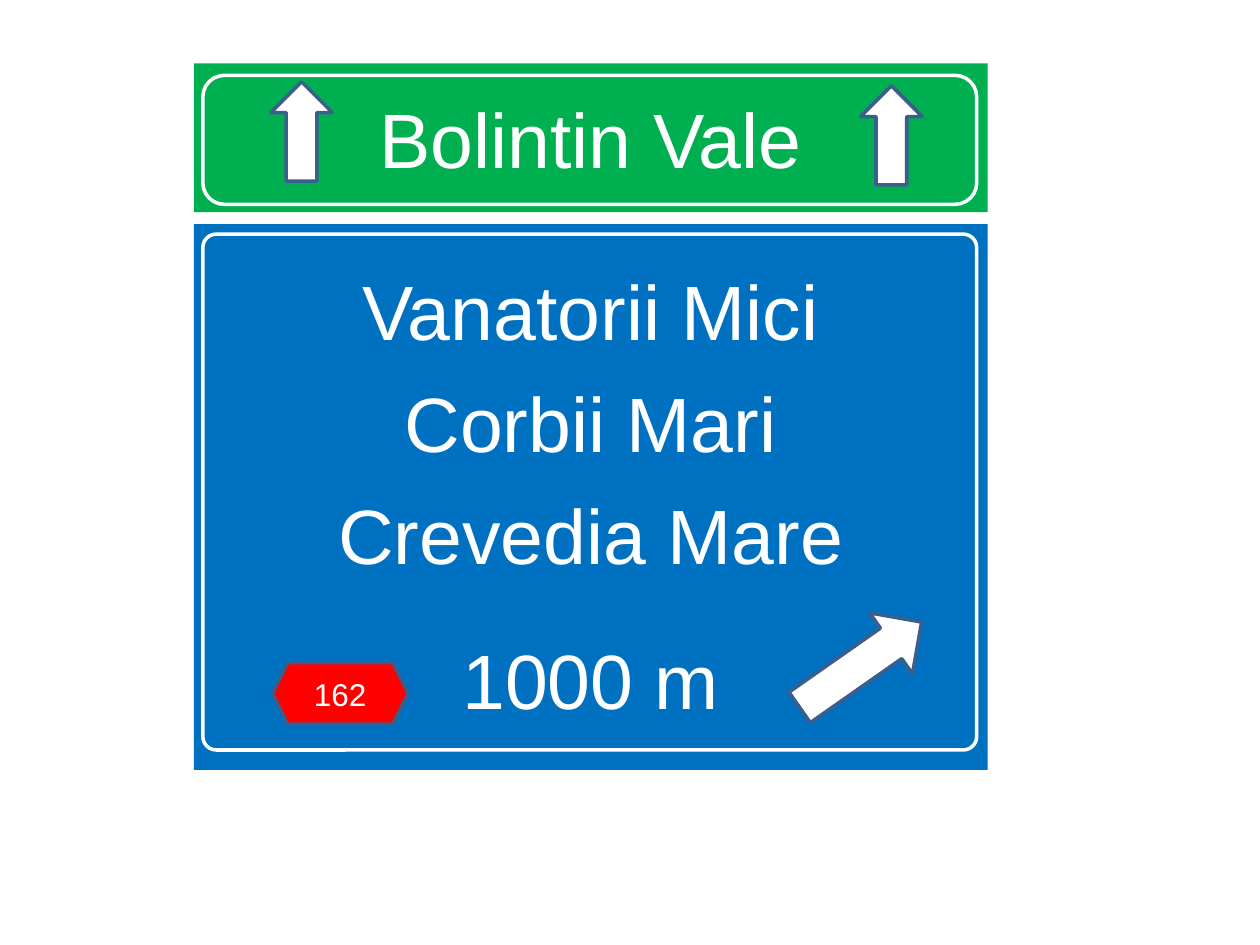
from pptx import Presentation
from pptx.dml.color import RGBColor
from pptx.enum.shapes import MSO_SHAPE
from pptx.enum.text import MSO_ANCHOR, PP_ALIGN
from pptx.util import Cm, Pt

GREEN = RGBColor(0x00, 0xB0, 0x50)
BLUE = RGBColor(0x00, 0x70, 0xC0)
RED = RGBColor(0xFF, 0x00, 0x00)
WHITE = RGBColor(0xFF, 0xFF, 0xFF)
OUTLINE = RGBColor(0x3A, 0x5F, 0x8C)

PANEL_LEFT, PANEL_WIDTH = 3.91, 16.0
BORDER_LEFT, BORDER_WIDTH = 4.09, 15.6


def add_figure(slide, kind, left, top, width, height, fill=None, line=None):
    """Add a preset shape, measured in centimetres."""
    shape = slide.shapes.add_shape(kind, Cm(left), Cm(top), Cm(width), Cm(height))
    shape.shadow.inherit = False
    if fill is None:
        shape.fill.background()
    else:
        shape.fill.solid()
        shape.fill.fore_color.rgb = fill
    if line is None:
        shape.line.fill.background()
    else:
        shape.line.color.rgb = line
        shape.line.width = Pt(2)
    return shape


def write_lines(shape, lines, size, anchor=MSO_ANCHOR.MIDDLE):
    """Write centred white lines into a shape."""
    text_frame = shape.text_frame
    text_frame.word_wrap = True
    text_frame.vertical_anchor = anchor
    text_frame.text = "\n".join(lines)
    for paragraph in text_frame.paragraphs:
        paragraph.alignment = PP_ALIGN.CENTER
        font = paragraph.runs[0].font
        font.name = "Arial"
        font.size = Pt(size)
        font.color.rgb = WHITE


def add_panel(slide, top, height, fill):
    return add_figure(slide, MSO_SHAPE.RECTANGLE, PANEL_LEFT, top,
                      PANEL_WIDTH, height, fill)


def add_border(slide, top, height):
    return add_figure(slide, MSO_SHAPE.ROUNDED_RECTANGLE, BORDER_LEFT, top,
                      BORDER_WIDTH, height, line=WHITE)


def add_arrow(slide, kind, left, top, width, height, rotation=0):
    arrow = add_figure(slide, kind, left, top, width, height, WHITE, OUTLINE)
    arrow.rotation = rotation


def main():
    presentation = Presentation()
    presentation.slide_width = Cm(25.4)
    presentation.slide_height = Cm(19.05)
    slide = presentation.slides.add_slide(presentation.slide_layouts[6])

    # Green panel: straight ahead
    ahead_panel = add_panel(slide, 1.28, 3.0, GREEN)
    write_lines(ahead_panel, ["Bolintin Vale"], 44)

    # Blue panel: places at the exit and the distance to it
    exit_panel = add_panel(slide, 4.52, 11.0, BLUE)
    write_lines(exit_panel,
                ["Vanatorii Mici", "Corbii Mari", "Crevedia Mare", "1000 m"],
                44, MSO_ANCHOR.BOTTOM)
    exit_panel.text_frame.margin_bottom = Cm(0.9)
    *_, last_place, distance = exit_panel.text_frame.paragraphs
    for paragraph in exit_panel.text_frame.paragraphs[1:3]:
        paragraph.space_before = Pt(11)
    distance.space_before = Pt(30.5)

    # Direction arrows
    add_arrow(slide, MSO_SHAPE.RIGHT_ARROW, 15.85, 12.65, 3.0, 1.5, 325)
    for left, top in ((5.46, 1.65), (17.35, 1.73)):
        add_arrow(slide, MSO_SHAPE.UP_ARROW, left, top, 1.24, 2.0)

    # Road number
    road_number = add_figure(slide, MSO_SHAPE.HEXAGON, 5.49, 13.36, 2.74, 1.24,
                             RED, OUTLINE)
    write_lines(road_number, ["162"], 18)

    # White borders
    add_border(slide, 1.52, 2.6)
    add_border(slide, 4.72, 10.4).adjustments[0] = 0.026

    presentation.save("out.pptx")


if __name__ == "__main__":
    main()
